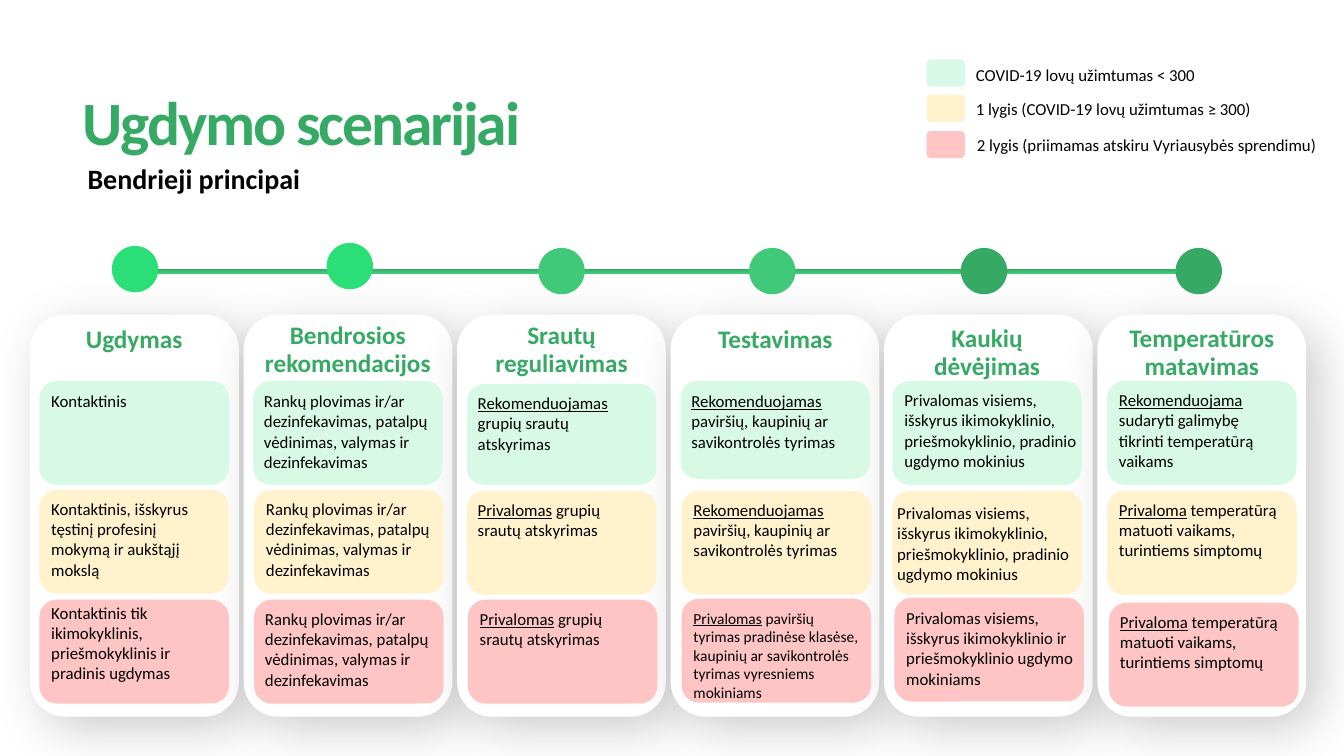
"""Build the slide of schooling scenarios by occupancy level."""
from dataclasses import dataclass

from lxml.etree import SubElement
from pptx import Presentation
from pptx.dml.color import RGBColor
from pptx.enum.shapes import MSO_SHAPE as Preset
from pptx.enum.text import MSO_ANCHOR as Anchor, MSO_AUTO_SIZE as AutoSize, PP_ALIGN as Align
from pptx.oxml.ns import qn
from pptx.shapes.autoshape import Shape
from pptx.slide import Slide
from pptx.util import Inches, Pt

FONT = "Calibri"
BLACK = RGBColor(0x00, 0x00, 0x00)
WHITE = RGBColor(0xFF, 0xFF, 0xFF)
BRIGHT = RGBColor(0x2B, 0xDF, 0x78)
MEDIUM = RGBColor(0x40, 0xC9, 0x78)
DARK = RGBColor(0x36, 0xAA, 0x65)
MINT = RGBColor(0xD7, 0xF9, 0xE6)
CREAM = RGBColor(0xFF, 0xF2, 0xCC)
PINK = RGBColor(0xFF, 0xC5, 0xC5)
LEVELS = (MINT, CREAM, PINK)

CARD_LEFT, CARD_TOP, CARD_PITCH = 0.3, 3.12, 2.117
CELL_WIDTH, CELL_HEIGHT, DOT = 1.88, 1.03, 0.46


@dataclass(frozen=True)
class Cell:
    left: float
    top: float
    text: str
    keyword: str = ""
    height: float = CELL_HEIGHT
    size: float = 12
    text_width: float = 1.86
    shift_x: float = 0.02
    shift_y: float = 0.04


@dataclass(frozen=True)
class Column:
    heading: str
    heading_top: float
    dot_left: float
    dot_top: float
    dot_color: RGBColor
    cells: tuple[Cell, Cell, Cell]


@dataclass(frozen=True)
class Legend:
    top: float
    text_left: float
    text_top: float
    width: float
    text: str


HYGIENE = "Rankų plovimas ir/ar dezinfekavimas, patalpų vėdinimas, valymas ir dezinfekavimas"
FLOWS = " grupių srautų atskyrimas"
SURFACES = " paviršių, kaupinių ar savikontrolės tyrimas"
MASKS = "Privalomas visiems, išskyrus ikimokyklinio, priešmokyklinio, pradinio ugdymo mokinius"
FEVER = " temperatūrą matuoti vaikams, turintiems simptomų"

COLUMNS = (
    Column("Ugdymas", 3.18, 1.11, 2.44, BRIGHT, (
        Cell(0.39, 3.78, "Kontaktinis", shift_y=0.05),
        Cell(0.39, 4.86, "Kontaktinis, išskyrus tęstinį profesinį mokymą ir aukštąjį mokslą"),
        Cell(0.39, 5.95, "Kontaktinis tik ikimokyklinis, priešmokyklinis ir pradinis ugdymas",
             text_width=1.79, shift_y=-0.02))),
    Column("Bendrosios rekomendacijos", 3.14, 3.24, 2.41, BRIGHT, (
        Cell(2.51, 3.78, HYGIENE, shift_x=0.01, shift_y=0.05),
        Cell(2.52, 4.86, HYGIENE),
        Cell(2.52, 5.95, HYGIENE, shift_x=0.01))),
    Column("Srautų reguliavimas", 3.14, 5.34, 2.46, MEDIUM, (
        Cell(4.63, 3.81, FLOWS, "Rekomenduojamas", height=1, shift_x=0.01),
        Cell(4.63, 4.87, FLOWS, "Privalomas", shift_x=0.01),
        Cell(4.64, 5.95, FLOWS, "Privalomas"))),
    Column("Testavimas", 3.18, 7.43, 2.46, MEDIUM, (
        Cell(6.75, 3.78, SURFACES, "Rekomenduojamas", height=0.97, shift_x=0.01, shift_y=0.05),
        Cell(6.76, 4.87, SURFACES, "Rekomenduojamas"),
        Cell(6.76, 5.94, " paviršių tyrimas pradinėse klasėse, kaupinių ar savikontrolės "
             "tyrimas vyresniems mokiniams", "Privalomas", size=11, shift_y=0.05))),
    Column("Kaukių dėvėjimas", 3.17, 9.53, 2.46, DARK, (
        Cell(8.85, 3.78, MASKS, text_width=1.92),
        Cell(8.85, 4.87, MASKS, text_width=1.92, shift_x=-0.05, shift_y=0.07),
        Cell(8.87, 5.93, "Privalomas visiems, išskyrus ikimokyklinio ir priešmokyklinio "
             "ugdymo mokiniams", shift_y=0.05))),
    Column("Temperatūros matavimas", 3.17, 11.66, 2.46, DARK, (
        Cell(10.98, 3.78, " sudaryti galimybę tikrinti temperatūrą vaikams", "Rekomenduojama"),
        Cell(10.98, 4.87, FEVER, "Privaloma"),
        Cell(11, 5.98, FEVER, "Privaloma", shift_x=0.01))),
)

LEGENDS = (
    Legend(0.59, 9.58, 0.59, 2.88, "COVID-19 lovų užimtumas < 300"),
    Legend(0.94, 9.58, 0.93, 3.38, "1 lygis (COVID-19 lovų užimtumas ≥ 300)"),
    Legend(1.3, 9.59, 1.29, 3.74, "2 lygis (priimamas atskiru Vyriausybės sprendimu)"),
)


def add_block(page: Slide, preset: Preset, left: float, top: float,
              width: float, height: float, color: RGBColor) -> Shape:
    """Add a borderless filled shape."""
    block = page.shapes.add_shape(preset, Inches(left), Inches(top), Inches(width), Inches(height))
    block.fill.solid()
    block.fill.fore_color.rgb = color
    block.line.fill.background()
    block.shadow.inherit = False
    return block


def add_soft_shadow(block: Shape) -> None:
    """Give a shape a blurred, offset shadow."""
    effects = block.element.spPr.find(qn("a:effectLst"))
    shadow = SubElement(effects, qn("a:outerShdw"), blurRad=str(Pt(37)), dist=str(Pt(12)),
                        dir=str(43 * 60000), algn="tl", rotWithShape="0")
    tint = SubElement(shadow, qn("a:srgbClr"), val=str(BLACK))
    SubElement(tint, qn("a:alpha"), val="20000")


def add_text(page: Slide, left: float, top: float, width: float, height: float, text: str,
             size: float, color: RGBColor = BLACK, bold: bool = False, keyword: str = "") -> Shape:
    """Add a wrapped text box, with an optional underlined opening word."""
    box = page.shapes.add_textbox(Inches(left), Inches(top), Inches(width), Inches(height))
    frame = box.text_frame
    frame.word_wrap = True
    frame.auto_size = AutoSize.SHAPE_TO_FIT_TEXT
    para = frame.paragraphs[0]
    for words, underlined in ((keyword, True), (text, False)):
        if words:
            span = para.add_run()
            span.text = words
            span.font.name = FONT
            span.font.size = Pt(size)
            span.font.bold = bold
            span.font.underline = underlined
            span.font.color.rgb = color
    return box


def add_header(page: Slide) -> None:
    """Add the title and subtitle."""
    title = add_text(page, 0.72, 0.85, 12.27, 0.77, "Ugdymo scenarijai", 44, DARK, True)
    title.text_frame.auto_size = AutoSize.NONE
    title.text_frame.vertical_anchor = Anchor.BOTTOM
    para = title.text_frame.paragraphs[0]
    para.line_spacing = 0.9
    para.runs[0].font._element.set("spc", "-150")
    add_text(page, 0.77, 1.55, 12.33, 0.44, "Bendrieji principai", 20, bold=True)


def add_timeline(page: Slide) -> None:
    """Add the gradient bar that the dots sit on."""
    bar = add_block(page, Preset.RECTANGLE, 1.38, 2.67, 10.52, 0.05, MEDIUM)
    bar.fill.gradient()
    bar.fill.gradient_angle = 270
    for stop, position, color in zip(bar.fill.gradient_stops, (0, 0.81), (DARK, MEDIUM)):
        stop.position = position
        stop.color.rgb = color


def add_column(page: Slide, column: Column) -> None:
    """Add the dot, heading and level cells of one column."""
    add_block(page, Preset.OVAL, column.dot_left, column.dot_top, DOT, DOT, column.dot_color)
    left = column.cells[0].left
    height = 0.66 if " " in column.heading else 0.38
    heading = add_text(page, left, column.heading_top, CELL_WIDTH, height,
                       column.heading, 18, DARK, True)
    para = heading.text_frame.paragraphs[0]
    para.alignment = Align.CENTER
    para.line_spacing = Pt(20)
    for cell, color in zip(column.cells, LEVELS):
        add_block(page, Preset.ROUNDED_RECTANGLE, cell.left, cell.top,
                  CELL_WIDTH, cell.height, color)
        add_text(page, cell.left + cell.shift_x, cell.top + cell.shift_y, cell.text_width, 0.91,
                 cell.text, cell.size, keyword=cell.keyword)


def main() -> None:
    """Assemble and save the deck."""
    deck = Presentation()
    deck.slide_width, deck.slide_height = Inches(13.33), Inches(7.5)
    page = deck.slides.add_slide(deck.slide_layouts[6])
    add_header(page)
    add_timeline(page)
    for index in range(len(COLUMNS)):
        add_soft_shadow(add_block(page, Preset.ROUNDED_RECTANGLE, CARD_LEFT + index * CARD_PITCH,
                                  CARD_TOP, 2.07, 3.99, WHITE))
    for column in COLUMNS:
        add_column(page, column)
    for legend, color in zip(LEGENDS, LEVELS):
        add_block(page, Preset.ROUNDED_RECTANGLE, 9.19, legend.top, 0.38, 0.27, color)
        add_text(page, legend.text_left, legend.text_top, legend.width, 0.3, legend.text, 12)
    deck.save("out.pptx")


if __name__ == "__main__":
    main()
